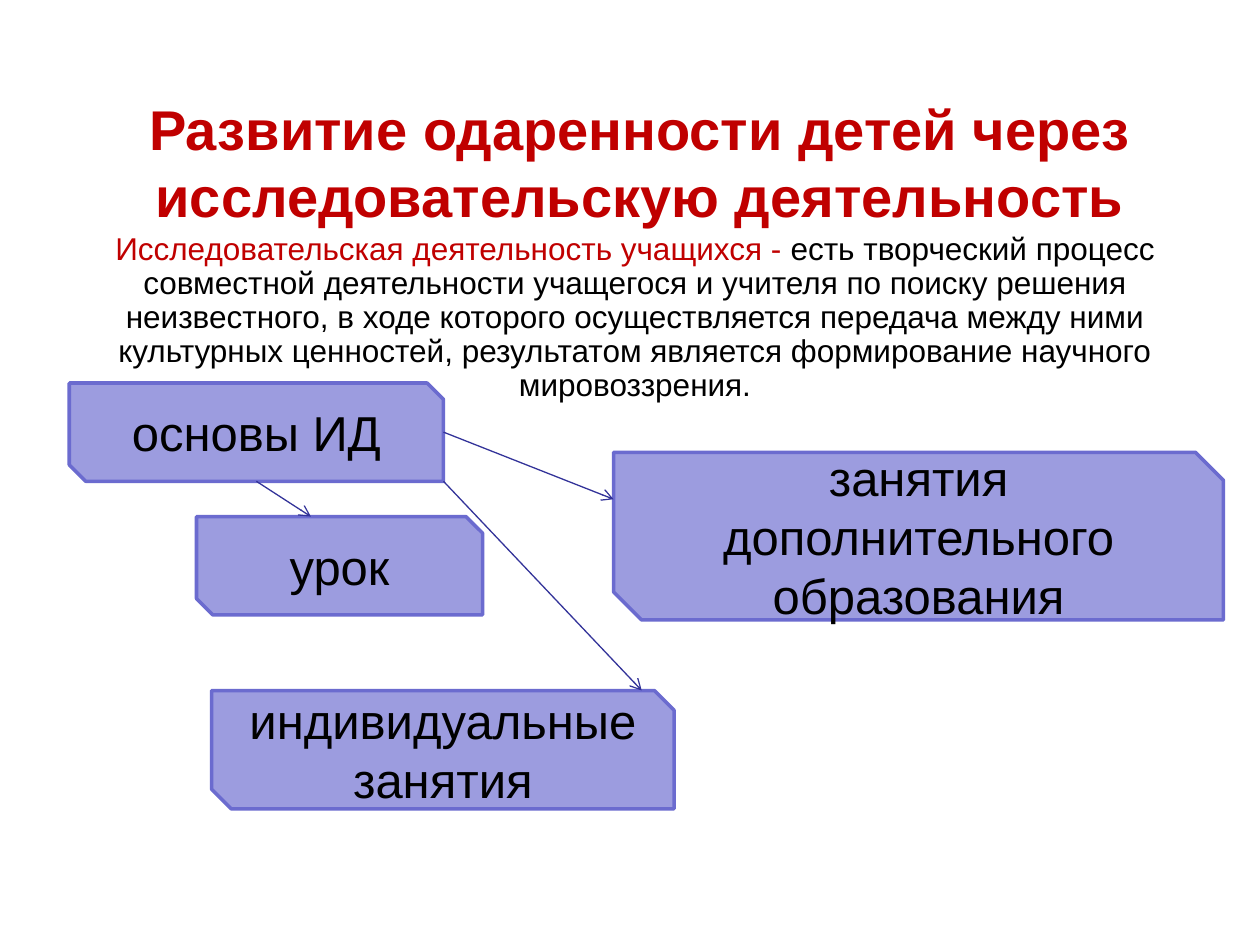
from typing import NamedTuple

from lxml.etree import SubElement
from pptx import Presentation
from pptx.dml.color import RGBColor
from pptx.enum.shapes import MSO_CONNECTOR as CONN, MSO_SHAPE as SHAPE
from pptx.enum.text import MSO_ANCHOR as ANCHOR, MSO_AUTO_SIZE as AUTO, PP_ALIGN as ALIGN
from pptx.oxml.ns import qn
from pptx.util import Inches, Pt

WIDTH, HEIGHT = Inches(10), Inches(7.5)
FONT = "Arial"
RED, BLACK = "C00000", "000000"
FILL, BORDER, ARROW = "9C9CDF", "6B6BCF", "333399"


class Area(NamedTuple):
    """Position and size in percent of the slide."""
    x: float
    y: float
    w: float
    h: float

    def point(self, across: float, down: float) -> tuple[int, int]:
        return (int(WIDTH * (self.x + self.w * across) / 100),
                int(HEIGHT * (self.y + self.h * down) / 100))


class Run(NamedTuple):
    text: str
    size: float
    color: str = BLACK
    bold: bool = False


class Link(NamedTuple):
    """Connection points as shares of the root and target boxes."""
    start: tuple[float, float]
    target: str
    end: tuple[float, float]


LESSON, SOLO = "урок", "индивидуальные занятия"
ROOT, EXTRA = "основы ИД", "занятия дополнительного образования"

BOXES = {
    LESSON: Area(15.6, 54.67, 22.7, 10.4),
    SOLO: Area(16.8, 73.07, 36.7, 12.53),
    ROOT: Area(5.5, 40.53, 29.7, 10.4),
    EXTRA: Area(48.7, 47.87, 48.4, 17.73),
}
LINKS = [
    Link((0.5, 1), LESSON, (0.4, 0)),
    Link((1, 0.5), EXTRA, (0, 0.28)),
    Link((1, 1), SOLO, (0.93, 0)),
]
TITLE = [Run("Развитие одаренности детей через исследовательскую деятельность",
             32, RED, True)]
DEFINITION = [
    Run("Исследовательская деятельность учащихся - ", 18, RED),
    Run("есть творческий процесс совместной деятельности учащегося и учителя "
        "по поиску решения неизвестного, в ходе которого осуществляется передача "
        "между ними культурных ценностей, результатом является формирование "
        "научного мировоззрения.", 18),
]


def rgb(color: str) -> RGBColor:
    return RGBColor.from_string(color)


def write(sp, runs: list[Run], anchor: ANCHOR, spacing: float = 1) -> None:
    tf = sp.text_frame
    tf.word_wrap = True
    tf.auto_size = AUTO.NONE
    tf.vertical_anchor = anchor
    p = tf.paragraphs[0]
    p.alignment = ALIGN.CENTER
    p.line_spacing = spacing
    p.space_before = Pt(0)
    for run in runs:
        r = p.add_run()
        r.text = run.text
        r.font.name = FONT
        r.font.size = Pt(run.size)
        r.font.bold = run.bold
        r.font.color.rgb = rgb(run.color)


def place(sp, area: Area) -> None:
    sp.left, sp.top = area.point(0, 0)
    sp.width = int(WIDTH * area.w / 100)
    sp.height = int(HEIGHT * area.h / 100)


def remove_bullet(p) -> None:
    props = p._p.get_or_add_pPr()
    props.set("marL", "0")
    props.set("indent", "0")
    SubElement(props, qn("a:buNone"))


def add_box(s, text: str, area: Area) -> None:
    sp = s.shapes.add_shape(SHAPE.SNIP_2_DIAG_RECTANGLE, 0, 0, 0, 0)
    place(sp, area)
    sp.shadow.inherit = False
    sp.fill.solid()
    sp.fill.fore_color.rgb = rgb(FILL)
    sp.line.color.rgb = rgb(BORDER)
    sp.line.width = Pt(2)
    write(sp, [Run(text, 28)], ANCHOR.MIDDLE)


def add_arrow(s, link: Link) -> None:
    start = BOXES[ROOT].point(*link.start)
    end = BOXES[link.target].point(*link.end)
    cxn = s.shapes.add_connector(CONN.STRAIGHT, *start, *end)
    cxn.line.color.rgb = rgb(ARROW)
    cxn.line.width = Pt(0.75)
    SubElement(cxn.line._get_or_add_ln(), qn("a:tailEnd"), type="arrow")
    SubElement(cxn._element.spPr, qn("a:effectLst"))


def main() -> None:
    prs = Presentation()
    prs.slide_width, prs.slide_height = WIDTH, HEIGHT
    s = prs.slides.add_slide(prs.slide_layouts[1])

    title, body = s.shapes.title, s.placeholders[1]
    place(title, Area(5.5, 9.33, 90.6, 15.73))
    write(title, TITLE, ANCHOR.TOP)
    place(body, Area(4.7, 24, 91.4, 19.47))
    write(body, DEFINITION, ANCHOR.TOP, 0.9)
    remove_bullet(body.text_frame.paragraphs[0])

    for text, area in BOXES.items():
        add_box(s, text, area)
    for link in LINKS:
        add_arrow(s, link)
    prs.save("out.pptx")


if __name__ == "__main__":
    main()
